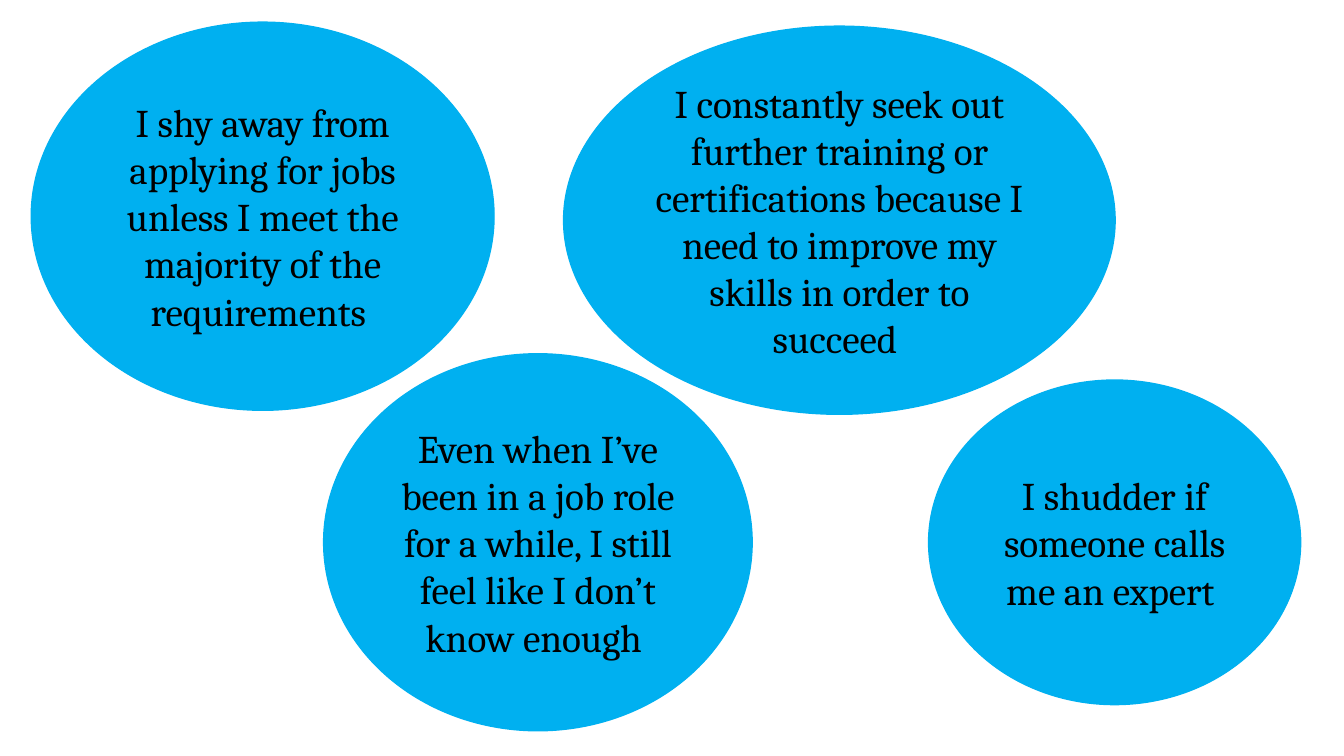
from pptx import Presentation
from pptx.dml.color import RGBColor
from pptx.enum.shapes import MSO_SHAPE
from pptx.enum.text import MSO_ANCHOR, PP_ALIGN
from pptx.util import Inches, Pt

OVAL = MSO_SHAPE.OVAL
MIDDLE = MSO_ANCHOR.MIDDLE
CENTER = PP_ALIGN.CENTER

# Left, top, width, height and wording of each statement
STATEMENTS = [
    (0.31, 0.22, 4.59, 3.85,
     "I shy away from applying for jobs unless I meet the majority of the requirements "),
    (5.59, 0.26, 5.47, 3.85,
     "I constantly seek out further training or certifications because I need "
     "to improve my skills in order to succeed "),
    (3.21, 3.51, 4.25, 3.74,
     "Even when I’ve been in a job role for a while, I still feel like I don’t know enough "),
    (9.21, 3.77, 3.69, 3.22,
     "I shudder if someone calls me an expert "),
]


def color(value):
    return RGBColor.from_string(value)


class StatementSlide:
    """Holds the style and the current slide."""
    font = "Cambria"
    size = 28
    blue = "00B0F0"
    black = "000000"

    def __init__(self, page):
        self.page = page

    def bubble(self, left, top, width, height, text):
        oval = self.page.shapes.add_shape(
            OVAL, Inches(left), Inches(top), Inches(width), Inches(height))
        oval.shadow.inherit = False
        oval.fill.solid()
        oval.fill.fore_color.rgb = color(self.blue)
        oval.line.color.rgb = color(self.blue)
        oval.line.width = Pt(1)

        # Centred wording
        frame = oval.text_frame
        frame.word_wrap = True
        frame.vertical_anchor = MIDDLE
        para = frame.paragraphs[0]
        para.alignment = CENTER
        span = para.add_run()
        span.text = text
        span.font.name = self.font
        span.font.size = Pt(self.size)
        span.font.color.rgb = color(self.black)


def main():
    deck = Presentation()
    deck.slide_width = Inches(13.33)
    deck.slide_height = Inches(7.5)
    slide = StatementSlide(deck.slides.add_slide(deck.slide_layouts[6]))

    for statement in STATEMENTS:
        slide.bubble(*statement)

    deck.save("out.pptx")


if __name__ == "__main__":
    main()
